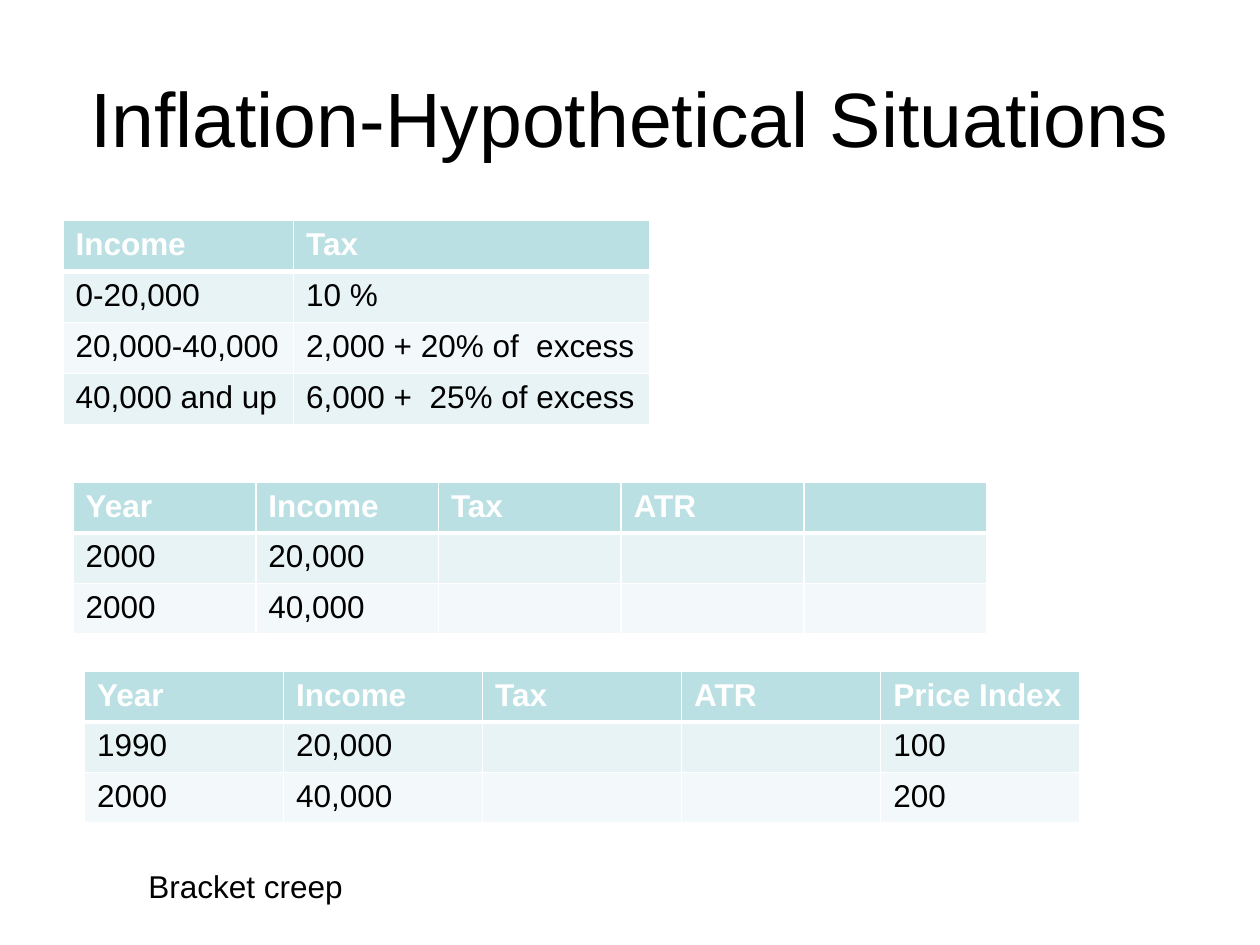
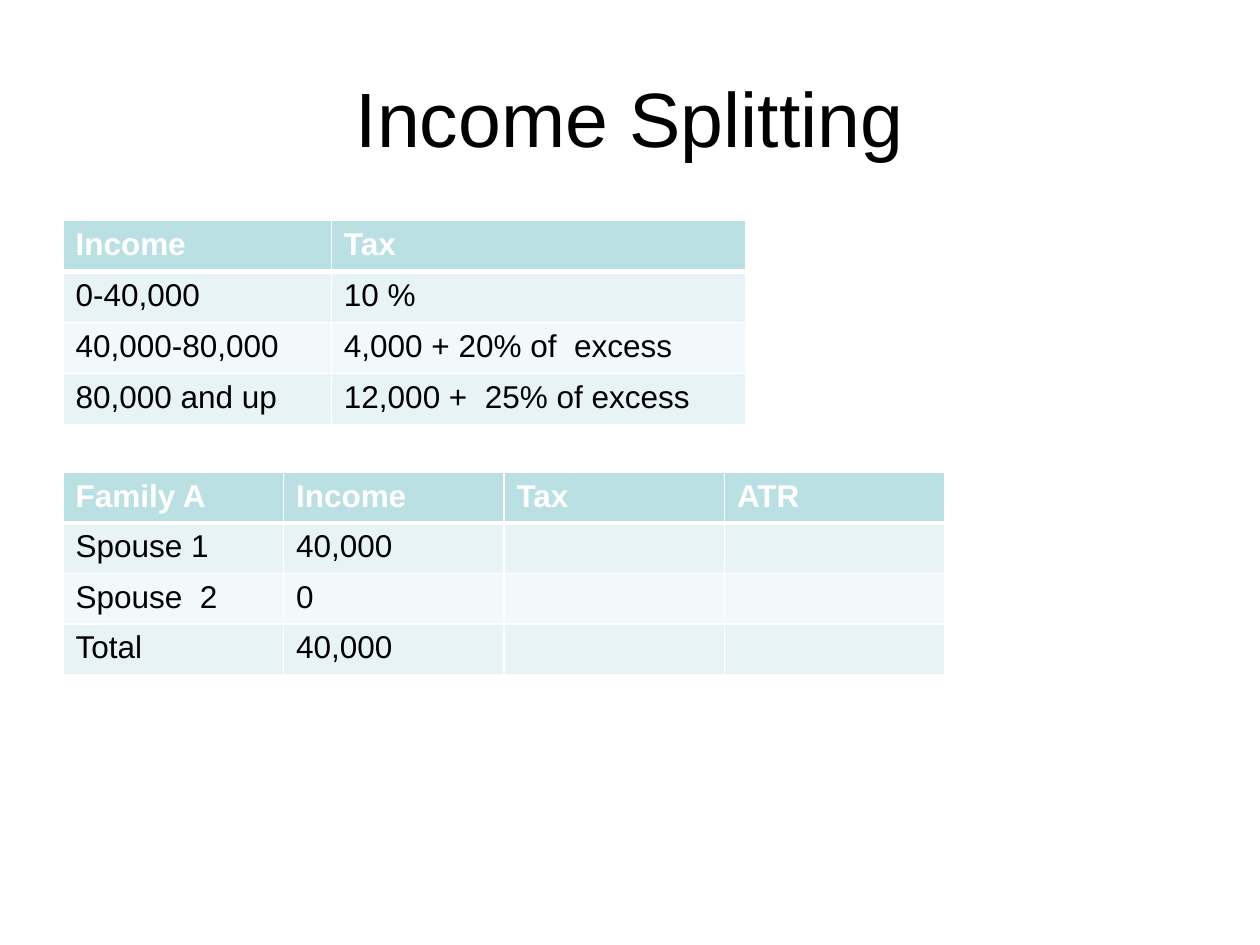
from lxml import etree
from pptx import Presentation
from pptx.dml.color import RGBColor
from pptx.enum import text
from pptx.oxml import ns
from pptx.util import Inches, Pt

BLACK = RGBColor(0x00, 0x00, 0x00)
WHITE = RGBColor(0xFF, 0xFF, 0xFF)
HEADER_FILL = RGBColor(0xBB, 0xE0, 0xE3)
BAND_FILLS = (RGBColor(0xE7, 0xF3, 0xF4), RGBColor(0xF3, 0xF9, 0xFA))


class Deck:
    """Holds the shared style and the current slide."""

    font = "Arial"
    title_size = 44
    body_size = 18
    thin_line, header_line = 1, 3

    def __init__(self):
        self.presentation = Presentation()
        self.presentation.slide_width = Inches(10)
        self.presentation.slide_height = Inches(7.5)
        self.slide = None

    def add_slide(self, title):
        self.slide = self.presentation.slides.add_slide(self.presentation.slide_layouts[6])
        frame = self.add_text(title, 0.5, 0.3, 9, 1.25, self.title_size)
        frame.vertical_anchor = text.MSO_ANCHOR.MIDDLE
        frame.paragraphs[0].alignment = text.PP_ALIGN.CENTER

    def add_text(self, words, left, top, width, height, size=body_size):
        shape = self.slide.shapes.add_textbox(
            Inches(left), Inches(top), Inches(width), Inches(height))
        frame = shape.text_frame
        frame.word_wrap = True
        frame.text = words
        self.format_runs(frame.paragraphs[0], size)
        return frame

    def format_runs(self, paragraph, size, color=BLACK, bold=False):
        for run in paragraph.runs:
            run.font.name = self.font
            run.font.size = Pt(size)
            run.font.color.rgb = color
            run.font.bold = bold

    def add_table(self, rows, left, top, column_widths, row_height):
        """Add a table with a header row and alternating bands below it."""
        shape = self.slide.shapes.add_table(
            len(rows), len(column_widths), Inches(left), Inches(top),
            Inches(sum(column_widths)), Inches(row_height * len(rows)))
        table = shape.table
        for column, width in zip(table.columns, column_widths):
            column.width = Inches(width)
        for row_index, row in enumerate(rows):
            table.rows[row_index].height = Inches(row_height)
            for column_index, words in enumerate(row):
                self.fill_cell(table.cell(row_index, column_index), words, row_index)

    def fill_cell(self, cell, words, row_index):
        is_header = row_index == 0
        cell.text = words
        self.format_runs(cell.text_frame.paragraphs[0], self.body_size,
                         WHITE if is_header else BLACK, is_header)
        # Borders come before the fill in the cell properties
        top = self.header_line if row_index == 1 else self.thin_line
        bottom = self.header_line if is_header else self.thin_line
        self.set_borders(cell, L=self.thin_line, R=self.thin_line, T=top, B=bottom)
        cell.fill.solid()
        cell.fill.fore_color.rgb = HEADER_FILL if is_header else BAND_FILLS[(row_index - 1) % 2]

    def set_borders(self, cell, **widths):
        properties = cell._tc.get_or_add_tcPr()
        for side, width in widths.items():
            line = etree.SubElement(properties, ns.qn(f"a:ln{side}"), w=str(Pt(width)))
            fill = etree.SubElement(line, ns.qn("a:solidFill"))
            etree.SubElement(fill, ns.qn("a:srgbClr"), val=str(WHITE))


def main():
    deck = Deck()

    # Inflation: tax brackets, then two income comparisons
    deck.add_slide("Inflation-Hypothetical Situations")
    deck.add_table([
        ("Income", "Tax"),
        ("0-20,000", "10 %"),
        ("20,000-40,000", "2,000 + 20% of  excess"),
        ("40,000 and up", "6,000 +  25% of excess"),
    ], 0.5, 1.75, (1.83, 2.83), 0.405)
    deck.add_table([
        ("Year", "Income", "Tax", "ATR", ""),
        ("2000", "20,000", "", "", ""),
        ("2000", "40,000", "", "", ""),
    ], 0.58, 3.83, [1.45] * 5, 0.4)
    deck.add_table([
        ("Year", "Income", "Tax", "ATR", "Price Index"),
        ("1990", "20,000", "", "", "100"),
        ("2000", "40,000", "", "", "200"),
    ], 0.67, 5.33, [1.58] * 5, 0.4)
    deck.add_text("Bracket creep", 1.08, 6.83, 1.76, 0.4)

    # Income splitting: tax brackets, then one family
    deck.add_slide("Income Splitting")
    deck.add_table([
        ("Income", "Tax"),
        ("0-40,000", "10 %"),
        ("40,000-80,000", "4,000 + 20% of  excess"),
        ("80,000 and up", "12,000 +  25% of excess"),
    ], 0.5, 1.75, (2.13, 3.29), 0.405)
    deck.add_table([
        ("Family A", "Income", "Tax", "ATR"),
        ("Spouse 1", "40,000", "", ""),
        ("Spouse  2", "0", "", ""),
        ("Total", "40,000", "", ""),
    ], 0.5, 3.75, [1.75] * 4, 0.4)

    deck.presentation.save("out.pptx")


if __name__ == "__main__":
    main()
